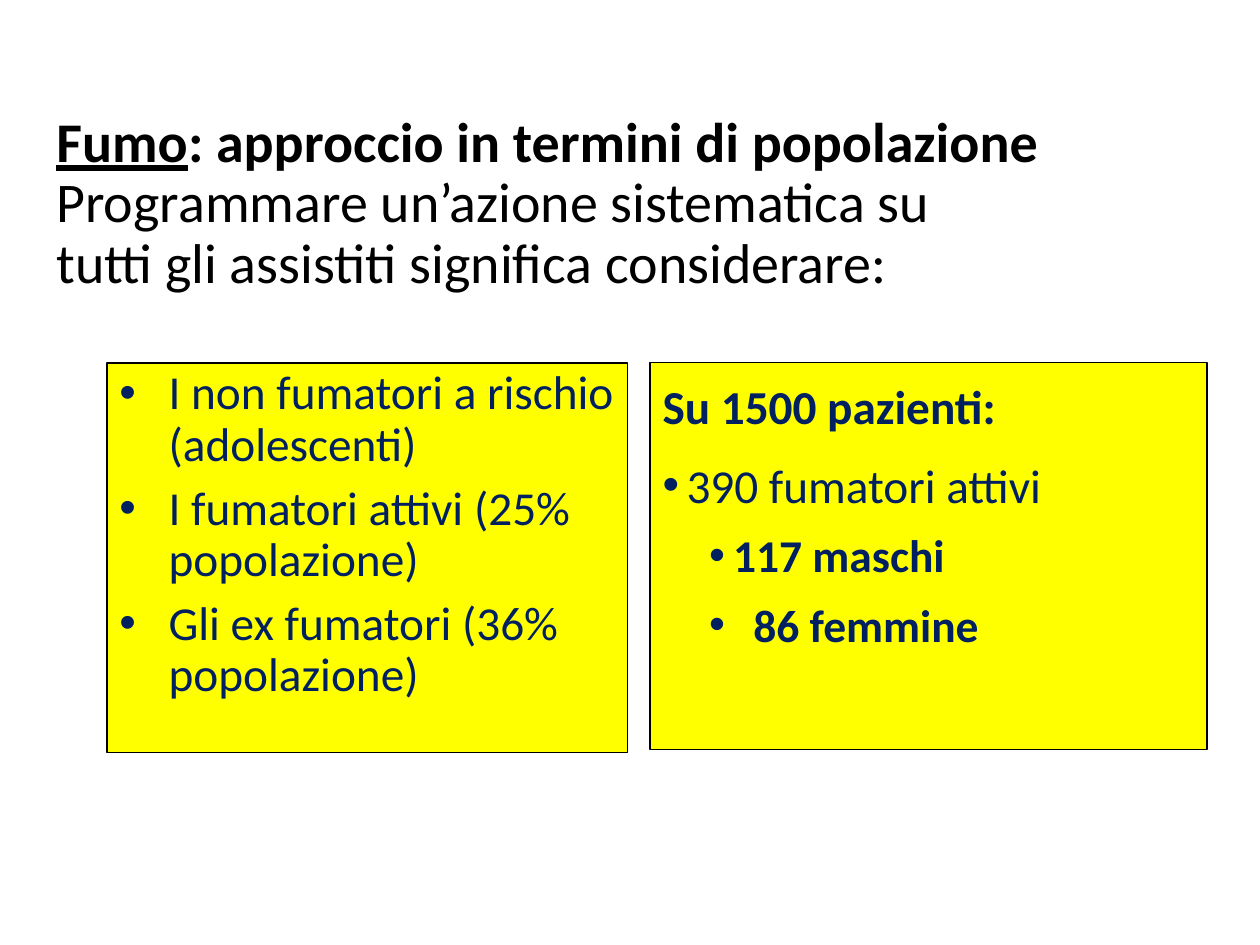
from lxml import etree
from pptx import Presentation
from pptx import util as u
from pptx.dml import color
from pptx.enum import shapes, text
from pptx.oxml import ns

COLORS = {"title": "000000", "body": "002060", "panel": "FFFF00", "border": "000000"}
FONT = "Calibri"


def rgb(name):
    return color.RGBColor.from_string(COLORS[name])


def add_span(para, words, tint, **formats):
    span = para.add_run()
    span.text = words
    span.font.color.rgb = rgb(tint)
    for name, value in {"name": FONT, **formats}.items():
        setattr(span.font, name, value)


def set_indent(para, margin, hanging, bullet):
    props = para._p.get_or_add_pPr()
    props.set("marL", str(u.Inches(margin)))
    props.set("indent", str(-u.Inches(hanging)))
    if bullet:
        font = etree.SubElement(props, ns.qn("a:buFont"))
        font.set("typeface", "Arial")
        etree.SubElement(props, ns.qn("a:buChar")).set("char", "•")


def add_title(page, place, lines):
    box = page.shapes.add_textbox(*map(u.Inches, place))
    frame = box.text_frame
    frame.word_wrap = True
    frame.vertical_anchor = text.MSO_ANCHOR.MIDDLE
    para = frame.paragraphs[0]
    para.line_spacing = 0.9
    for index, spans in enumerate(lines):
        if index:
            para.add_line_break()
        for words, formats in spans:
            add_span(para, words, "title", size=u.Pt(32), **formats)


def add_panel(page, place, line_spacing, items):
    box = page.shapes.add_shape(shapes.MSO_SHAPE.RECTANGLE, *map(u.Inches, place))
    box.shadow.inherit = False
    box.fill.solid()
    box.fill.fore_color.rgb = rgb("panel")
    box.line.color.rgb = rgb("border")
    box.line.width = u.Pt(0.75)
    frame = box.text_frame
    frame.word_wrap = True
    frame.vertical_anchor = text.MSO_ANCHOR.TOP
    for index, (words, style) in enumerate(items):
        para = frame.add_paragraph() if index else frame.paragraphs[0]
        layout = {
            "alignment": text.PP_ALIGN.LEFT,
            "level": style.get("level", 0),
            "line_spacing": line_spacing,
            "space_before": u.Pt(style.get("before", 7.5)),
        }
        for name, value in layout.items():
            setattr(para, name, value)
        set_indent(para, *style["indent"], style.get("bullet", True))
        add_span(para, words, "body", size=u.Pt(style.get("size", 27)),
                 bold=style.get("bold", False))


def main():
    deck = Presentation()
    deck.slide_width, deck.slide_height = u.Inches(10), u.Inches(7.5)
    page = deck.slides.add_slide(deck.slide_layouts[6])

    # Heading
    add_title(page, (0.35, 0.61, 9.37, 2.03), [
        [("Fumo", {"bold": True, "underline": True}),
         (": approccio in termini di popolazione", {"bold": True})],
        [("Programmare un’azione sistematica su", {})],
        [("tutti gli assistiti significa considerare:", {})],
    ])

    # Groups to consider
    group = {"indent": (0.39, 0.39)}
    add_panel(page, (0.85, 2.88, 4.13, 3.09), 0.9, [
        ("I non fumatori a rischio (adolescenti)", group),
        ("I fumatori attivi (25% popolazione)", group),
        ("Gli ex fumatori (36% popolazione)", group),
    ])

    # Patient counts
    count = {"indent": (0.19, 0.19)}
    detail = {"level": 1, "before": 3.8, "size": 26, "bold": True}
    add_panel(page, (5.16, 2.88, 4.42, 3.07), 1.15, [
        ("Su 1500 pazienti:", {**count, "bullet": False, "bold": True}),
        ("390 fumatori attivi", count),
        ("117 maschi", {**detail, "indent": (0.56, 0.19)}),
        ("86 femmine", {**detail, "indent": (0.72, 0.35)}),
    ])

    deck.save("out.pptx")


if __name__ == "__main__":
    main()
